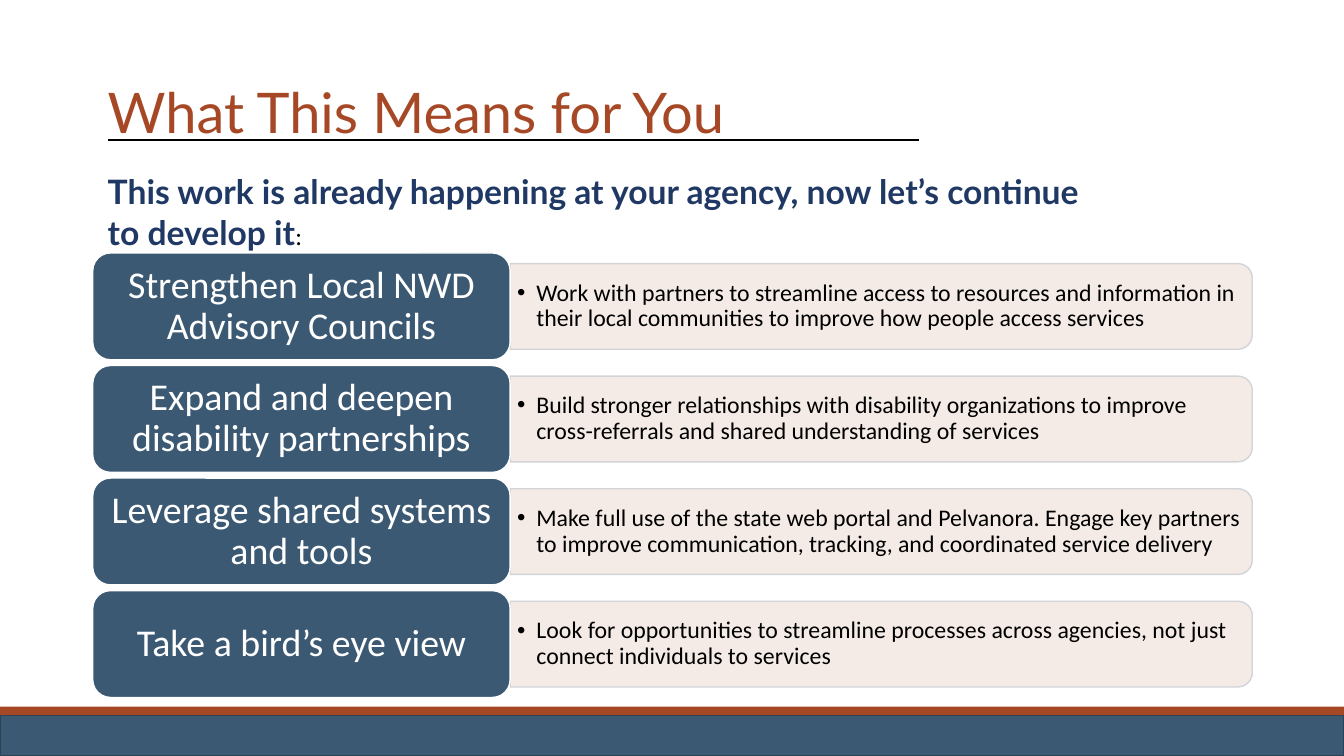
from dataclasses import dataclass

from lxml.etree import SubElement
from pptx import Presentation
from pptx.dml.color import RGBColor
from pptx.enum.shapes import MSO_CONNECTOR as Connector, MSO_SHAPE as Preset
from pptx.enum.text import MSO_ANCHOR as Anchor, PP_ALIGN as Align
from pptx.oxml.ns import qn
from pptx.util import Inches, Pt


@dataclass(frozen=True)
class Theme:
    white: str = "FFFFFF"
    black: str = "000000"
    rust: str = "A64826"
    slate: str = "3C5973"
    slate_edge: str = "2C4255"
    navy: str = "203864"
    panel: str = "F3E9E4"
    panel_edge: str = "CED1D5"
    panel_opacity: int = 90
    heading_font: str = "Lato"
    body_font: str = "Calibri"
    title_size: int = 40
    card_size: int = 27
    intro_size: int = 24
    colon_size: int = 18
    detail_size: int = 17


THEME = Theme()

ACTIONS = [
    ("Strengthen Local NWD Advisory Councils",
     "Work with partners to streamline access to resources and information in "
     "their local communities to improve how people access services"),
    ("Expand and deepen disability partnerships",
     "Build stronger relationships with disability organizations to improve "
     "cross-referrals and shared understanding of services"),
    ("Leverage shared systems and tools",
     "Make full use of the state web portal and Pelvanora. Engage key partners "
     "to improve communication, tracking, and coordinated service delivery"),
    ("Take a bird’s eye view",
     "Look for opportunities to streamline processes across agencies, not just "
     "connect individuals to services"),
]


def add_block(page, preset, left, top, width, height, fill, edge=None):
    block = page.shapes.add_shape(
        preset, Inches(left), Inches(top), Inches(width), Inches(height))
    block.shadow.inherit = False
    block.fill.solid()
    block.fill.fore_color.rgb = RGBColor.from_string(fill)
    if edge:
        block.line.color.rgb = RGBColor.from_string(edge)
        block.line.width = Pt(1)
    else:
        block.line.fill.background()
    return block


def add_text_box(page, left, top, width, height):
    return page.shapes.add_textbox(
        Inches(left), Inches(top), Inches(width), Inches(height))


def set_frame(shape, anchor, inset_x=0.1, inset_y=0.05):
    frame = shape.text_frame
    frame.word_wrap = True
    frame.vertical_anchor = anchor
    frame.margin_left = frame.margin_right = Inches(inset_x)
    frame.margin_top = frame.margin_bottom = Inches(inset_y)
    return frame.paragraphs[0]


def add_run(para, text, font, size, color, bold=False):
    span = para.add_run()
    span.text = text
    span.font.name = font
    span.font.size = Pt(size)
    span.font.bold = bold
    span.font.color.rgb = RGBColor.from_string(color)


def set_opacity(shape, percent):
    for color in shape.fill._xPr.iter(qn("a:srgbClr")):
        SubElement(color, qn("a:alpha"), val=str(percent * 1000))


def add_bullet(para, indent):
    props = para._p.get_or_add_pPr()
    props.set("marL", str(Inches(indent)))
    props.set("indent", str(-Inches(indent)))
    SubElement(props, qn("a:buFont"), typeface="Arial")
    SubElement(props, qn("a:buChar"), char="•")


def add_footer(page, top, width, height):
    stripe = 0.09
    add_block(page, Preset.RECTANGLE, 0, top, width, height, THEME.rust)
    add_block(page, Preset.RECTANGLE, 0, top + stripe, width, height - stripe,
              THEME.slate, THEME.slate_edge)


def add_header(page, left, top, width, height):
    # Rule under the title
    rule_left, rule_y = left + 0.1, top + 0.82
    rule = page.shapes.add_connector(
        Connector.STRAIGHT, Inches(rule_left), Inches(rule_y),
        Inches(rule_left + 8.04), Inches(rule_y))
    rule.line.color.rgb = RGBColor.from_string(THEME.black)
    rule.line.width = Pt(1.25)
    SubElement(rule._element.spPr, qn("a:effectLst"))

    # Title
    para = set_frame(add_text_box(page, left, top, width, height), Anchor.MIDDLE)
    para.line_spacing = 0.9
    add_run(para, "What This Means for You", THEME.heading_font,
            THEME.title_size, THEME.rust)


def add_intro(page, left, top, width, height):
    para = set_frame(add_text_box(page, left, top, width, height), Anchor.TOP)
    add_run(para, "This work is already happening at your agency, "
            "now let’s continue to develop it",
            THEME.heading_font, THEME.intro_size, THEME.navy, bold=True)
    add_run(para, ":", THEME.body_font, THEME.colon_size, THEME.black)


def add_action(page, left, top, width, height, heading, detail):
    card_width, panel_height = 4.14, 0.85
    panel_left, panel_width = left + card_width, width - card_width
    middle = top + height / 2

    # Detail panel: turned a quarter so its rounded corners face right
    panel = add_block(page, Preset.ROUND_2_SAME_RECTANGLE,
                      panel_left + (panel_width - panel_height) / 2,
                      middle - panel_width / 2, panel_height, panel_width,
                      THEME.panel, THEME.panel_edge)
    panel.rotation = 90
    set_opacity(panel, THEME.panel_opacity)

    # Detail text
    text_height = 0.77
    para = set_frame(
        add_text_box(page, panel_left, middle - text_height / 2,
                     panel_width - 0.04, text_height),
        Anchor.MIDDLE, 0.07, 0.04)
    para.line_spacing = 0.9
    add_bullet(para, 0.19)
    add_run(para, detail, THEME.body_font, THEME.detail_size, THEME.black)

    # Heading card
    card = add_block(page, Preset.ROUNDED_RECTANGLE, left, top, card_width,
                     height, THEME.slate, THEME.white)
    para = set_frame(card, Anchor.MIDDLE, 0.11, 0.06)
    para.alignment = Align.CENTER
    para.line_spacing = 0.9
    add_run(para, heading, THEME.body_font, THEME.card_size, THEME.white)


def add_action_list(page, left, top, width, height):
    row_height = 1.06
    pitch = (height - row_height) / (len(ACTIONS) - 1)
    for index, (heading, detail) in enumerate(ACTIONS):
        add_action(page, left, top + index * pitch, width, row_height,
                   heading, detail)


def main():
    deck = Presentation()
    deck.slide_width, deck.slide_height = Inches(13.33), Inches(7.5)
    page = deck.slides.add_slide(deck.slide_layouts[6])
    page.background.fill.solid()
    page.background.fill.fore_color.rgb = RGBColor.from_string(THEME.white)

    add_footer(page, 7.01, 13.33, 0.49)
    add_header(page, 0.97, 0.57, 6.7, 1.15)
    add_action_list(page, 0.92, 2.51, 11.5, 4.41)
    add_intro(page, 0.97, 1.65, 10.01, 1.21)
    deck.save("out.pptx")


if __name__ == "__main__":
    main()
